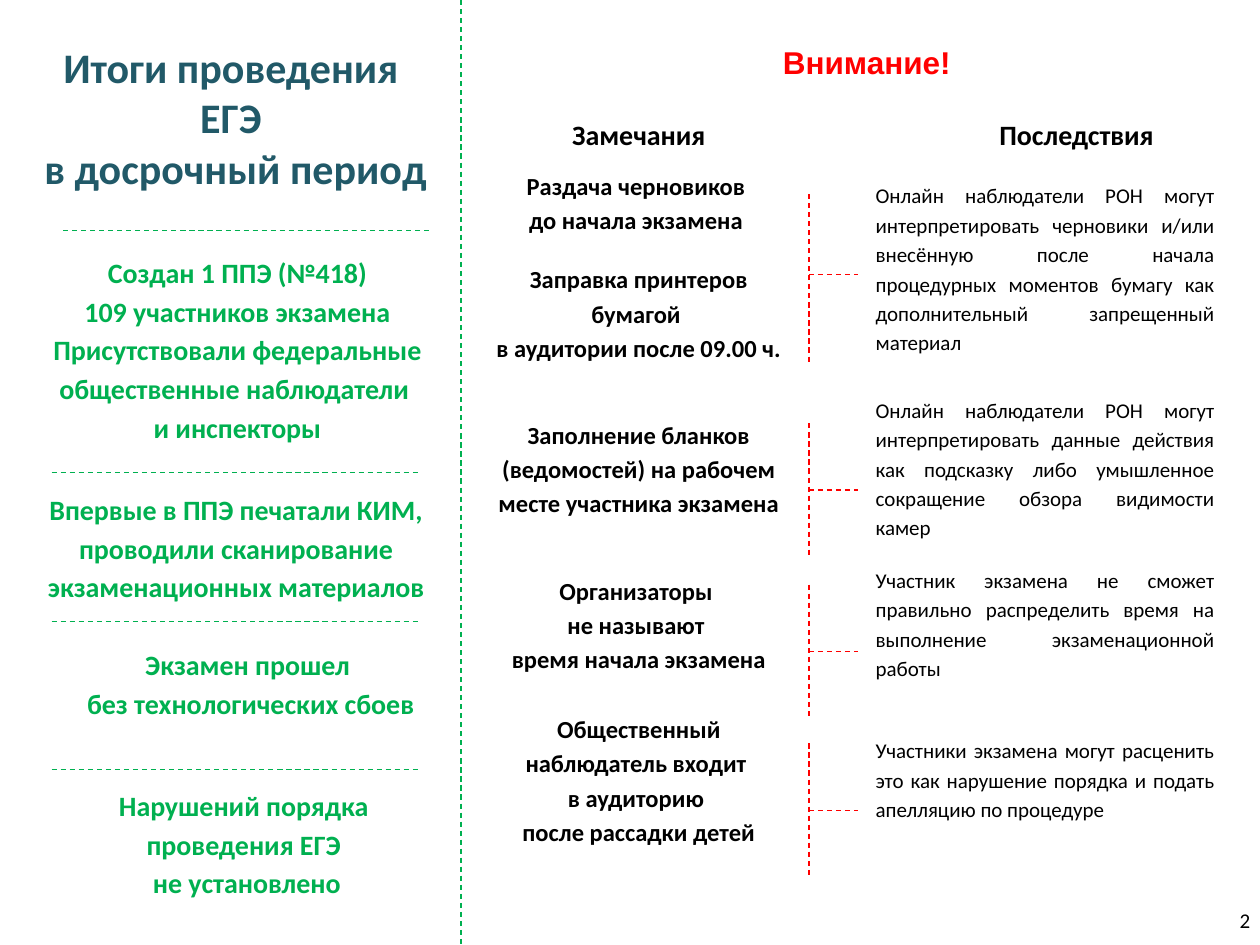
from copy import deepcopy

from lxml import etree
from pptx import Presentation
from pptx import util as u
from pptx.dml.color import RGBColor
from pptx.enum import dml, shapes, text
from pptx.oxml import ns

COLORS = {"title": "215968", "fact": "00B050", "alert": "FF0000", "body": "000000"}
ALIGN = text.PP_ALIGN
ANCHOR = text.MSO_ANCHOR

HEADING = {"size": 24, "color": "title", "bold": True, "spacing": 1.0}
FACT = {"size": 16, "color": "fact", "bold": True}
ALERT = {"size": 18, "color": "alert", "bold": True, "name": "Arial", "indent": 0.5}
REMARK_HEAD = {"size": 16, "bold": True}
EFFECT_HEAD = {**REMARK_HEAD, "indent": 0.5}
REMARK = {"size": 14, "bold": True}
EFFECT = {"size": 12, "align": ALIGN.JUSTIFY}
NUMBER = {"size": 12, "align": ALIGN.RIGHT, "spacing": 1.0}

FACTS = [
    ((0.27, 1.94, 3.23, 1.65), [
        "Создан 1 ППЭ (№418)", "109 участников экзамена",
        "Присутствовали федеральные общественные наблюдатели ", "и инспекторы"]),
    ((0.26, 3.82, 3.23, 1.03), [
        "Впервые в ППЭ печатали КИМ, проводили сканирование экзаменационных материалов "]),
    ((0.35, 5.05, 3.23, 0.72), ["Экзамен прошел", " без технологических сбоев"]),
    ((0.26, 6.17, 3.4, 1.01), [
        "Нарушений порядка ", "проведения ЕГЭ ", "не установлено"]),
]
RULES = [(0.5, 1.83), (0.41, 3.75), (0.41, 4.93), (0.41, 6.11)]
RULE_WIDTH = 2.92

COLUMN_WIDTHS = [2.52, 0.55, 2.83]
ROW_HEIGHTS = [0.35, 0.7, 1.06, 1.41, 1.06, 1.41]
REMARKS = [
    ["Раздача черновиков \vдо начала экзамена "],
    ["Заправка принтеров бумагой \vв аудитории после 09.00 ч."],
    ["Заполнение бланков (ведомостей) на рабочем месте участника экзамена"],
    ["Организаторы ", "не называют ", "время начала экзамена"],
    ["Общественный наблюдатель входит ", "в аудиторию ", "после рассадки детей"],
]
EFFECTS = {
    1: "Онлайн наблюдатели РОН могут интерпретировать черновики и/или внесённую после "
       "начала процедурных моментов бумагу как дополнительный запрещенный материал",
    3: "Онлайн наблюдатели РОН могут интерпретировать данные действия как подсказку либо "
       "умышленное сокращение обзора видимости камер",
    4: "Участник экзамена не сможет правильно распределить время на выполнение "
       "экзаменационной работы",
    5: "Участники экзамена могут расценить это как нарушение порядка и подать апелляцию "
       "по процедуре",
}
BRACKETS = [(1.54, 2.18, 2.88), (3.36, 3.89, 4.42), (4.64, 5.17, 5.7), (5.9, 6.43, 6.96)]
BRACKET_X, BRACKET_END = 6.42, 6.81


def write(frame, lines, style):
    for index, line in enumerate(lines):
        paragraph = frame.paragraphs[0] if index == 0 else frame.add_paragraph()
        paragraph.text = line
        paragraph.alignment = style.get("align", ALIGN.CENTER)
        paragraph.line_spacing = style.get("spacing", 1.15)
        if "indent" in style:
            paragraph._p.get_or_add_pPr().set("marL", str(u.Inches(style["indent"])))
        values = {
            "name": style.get("name", "Calibri"),
            "size": u.Pt(style["size"]),
            "bold": style.get("bold", False),
        }
        for run in paragraph.runs:
            for key, value in values.items():
                setattr(run.font, key, value)
            run.font.color.rgb = RGBColor.from_string(COLORS[style.get("color", "body")])
        for line_break in paragraph._p.findall(ns.qn("a:br")):
            line_break.append(deepcopy(paragraph.runs[0]._r.rPr))


def add_title(slide, box, lines):
    title = slide.shapes.title
    for key, value in zip(("left", "top", "width", "height"), box):
        setattr(title, key, u.Inches(value))
    title.text_frame.auto_size = text.MSO_AUTO_SIZE.NONE
    title.text_frame.vertical_anchor = ANCHOR.TOP
    write(title.text_frame, lines, HEADING)


def add_text(slide, box, lines, style, anchor=ANCHOR.TOP):
    frame = slide.shapes.add_textbox(*map(u.Inches, box)).text_frame
    frame.word_wrap = True
    frame.vertical_anchor = anchor
    write(frame, lines, style)


def add_dashed_line(slide, start, end, color):
    line = slide.shapes.add_connector(
        shapes.MSO_CONNECTOR.STRAIGHT, *map(u.Inches, (*start, *end)))
    line.line.color.rgb = RGBColor.from_string(COLORS[color])
    line.line.width = u.Pt(0.75)
    line.line.dash_style = dml.MSO_LINE.DASH
    etree.SubElement(line._element.spPr, ns.qn("a:effectLst"))


def add_remarks_table(slide):
    frame = slide.shapes.add_table(
        len(ROW_HEIGHTS), len(COLUMN_WIDTHS), u.Inches(3.81), u.Inches(0.9),
        u.Inches(sum(COLUMN_WIDTHS)), u.Inches(sum(ROW_HEIGHTS)))
    table = frame.table
    table.first_row = table.horz_banding = False
    for column, width in zip(table.columns, COLUMN_WIDTHS):
        column.width = u.Inches(width)
    for row, height in zip(table.rows, ROW_HEIGHTS):
        row.height = u.Inches(height)

    cell_format = {
        "margin_left": u.Inches(0.07), "margin_right": u.Inches(0.07),
        "margin_top": 0, "margin_bottom": 0, "vertical_anchor": ANCHOR.MIDDLE,
    }
    for cell in table.iter_cells():
        cell.fill.background()
        for key, value in cell_format.items():
            setattr(cell, key, value)
    for column, heading, style in ((0, "Замечания", REMARK_HEAD),
                                   (2, "Последствия", EFFECT_HEAD)):
        cell = table.cell(0, column)
        cell.vertical_anchor = ANCHOR.TOP
        write(cell.text_frame, [heading], style)
    for column in (1, 2):
        table.cell(1, column).merge(table.cell(2, column))
    for row, remark in enumerate(REMARKS, 1):
        write(table.cell(row, 0).text_frame, remark, REMARK)
    for row, effect in EFFECTS.items():
        write(table.cell(row, 2).text_frame, [effect], EFFECT)


def add_bracket(slide, top, middle, bottom):
    add_dashed_line(slide, (BRACKET_X, top), (BRACKET_X, bottom), "alert")
    add_dashed_line(slide, (BRACKET_X, middle), (BRACKET_END, middle), "alert")


def main():
    deck = Presentation()
    deck.slide_width, deck.slide_height = u.Inches(10), u.Inches(7.5)
    slide = deck.slides.add_slide(deck.slide_layouts[5])

    add_title(slide, (0.08, 0.28, 3.58, 1.31),
              ["Итоги проведения ", "ЕГЭ \vв досрочный период"])
    add_dashed_line(slide, (3.66, 0), (3.66, 7.5), "fact")
    for box, lines in FACTS:
        add_text(slide, box, lines, FACT)
    for left, top in RULES:
        add_dashed_line(slide, (left, top), (left + RULE_WIDTH, top), "fact")

    add_text(slide, (4.13, 0.25, 5, 0.43), ["Внимание!"], ALERT)
    add_remarks_table(slide)
    for bracket in BRACKETS:
        add_bracket(slide, *bracket)
    add_text(slide, (9.6, 7.1, 0.42, 0.4), ["2"], NUMBER, ANCHOR.MIDDLE)

    deck.save("out.pptx")


if __name__ == "__main__":
    main()
